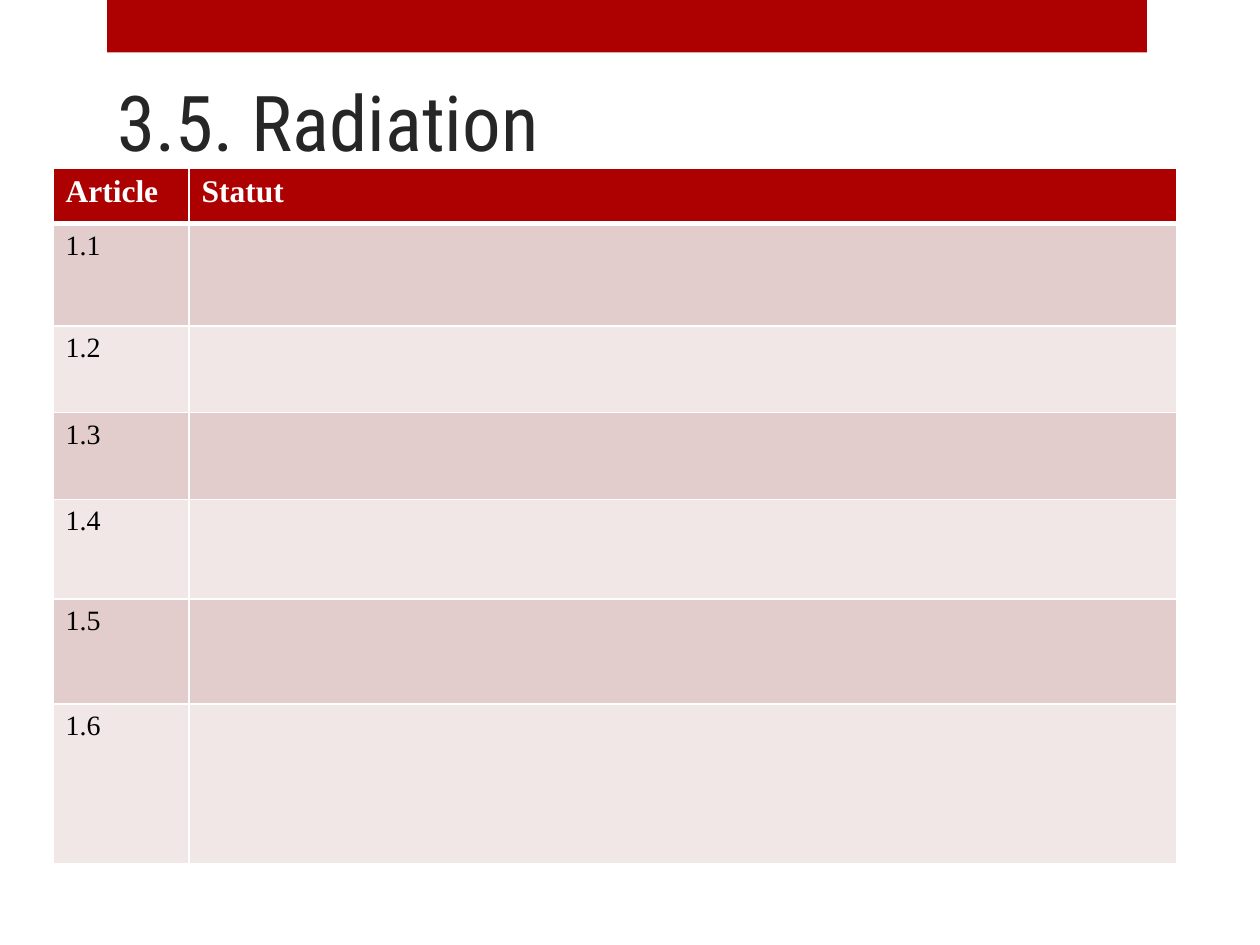
import pptx
import pptx.dml.color
import pptx.enum.shapes
import pptx.enum.text
import pptx.oxml
import pptx.oxml.ns
import pptx.util
from pptx.util import Cm

COLORS = {
    "red": "AD0101",
    "title": "262626",
    "band_dark": "E3CCCC",
    "band_light": "F1E7E7",
    "black": "000000",
    "white": "FFFFFF",
}
COLUMN_WIDTHS = [2.74, 19.91]
ROW_HEIGHTS = [1.12, 2.06, 1.75, 1.75, 2.01, 2.11, 3.23]
HEADERS = ["Article", "Statut"]
ARTICLES = ["1.1", "1.2", "1.3", "1.4", "1.5", "1.6"]


def color(name):
    return pptx.dml.color.RGBColor.from_string(COLORS[name])


def style_font(font, name, size, color_name, bold=False):
    font.name = name
    font.size = pptx.util.Pt(size)
    font.bold = bold
    font.color.rgb = color(color_name)


def add_banner(page, left, top, width, height):
    banner = page.shapes.add_shape(
        pptx.enum.shapes.MSO_SHAPE.RECTANGLE, Cm(left), Cm(top), Cm(width), Cm(height)
    )
    banner.shadow.inherit = False
    banner.fill.solid()
    banner.fill.fore_color.rgb = color("red")
    banner.line.fill.background()


def place_title(page, left, top, width, height):
    title = page.shapes.title
    title.left, title.top = Cm(left), Cm(top)
    title.width, title.height = Cm(width), Cm(height)
    frame = title.text_frame
    frame.text = "3.5. Radiation"
    frame.auto_size = pptx.enum.text.MSO_AUTO_SIZE.NONE
    frame.vertical_anchor = pptx.enum.text.MSO_ANCHOR.BOTTOM
    frame.margin_bottom = Cm(0.03)
    paragraph = frame.paragraphs[0]
    paragraph.alignment = pptx.enum.text.PP_ALIGN.LEFT
    style_font(paragraph.font, "Roboto Condensed", 44, "title")


def add_cell_border(cell, side, points):
    border = pptx.oxml.parse_xml(
        f'<a:{side} {pptx.oxml.ns.nsdecls("a")} w="{pptx.util.Pt(points)}">'
        f'<a:solidFill><a:srgbClr val="{COLORS["white"]}"/></a:solidFill></a:{side}>'
    )
    properties = cell._tc.get_or_add_tcPr()
    properties.insert(len(properties) - 1, border)


def format_cell(cell, row_index):
    is_header = row_index == 0
    if is_header:
        fill = "red"
    else:
        fill = "band_dark" if row_index % 2 else "band_light"
    cell.fill.solid()
    cell.fill.fore_color.rgb = color(fill)
    for side in ("lnL", "lnR", "lnT", "lnB"):
        below_header = (row_index, side) in ((0, "lnB"), (1, "lnT"))
        add_cell_border(cell, side, 3 if below_header else 1)
    style_font(
        cell.text_frame.paragraphs[0].font,
        "Times New Roman",
        18 if is_header else 16,
        "white" if is_header else "black",
        is_header,
    )


def add_status_table(page, left, top):
    table = page.shapes.add_table(
        len(ROW_HEIGHTS), len(COLUMN_WIDTHS), Cm(left), Cm(top),
        Cm(sum(COLUMN_WIDTHS)), Cm(sum(ROW_HEIGHTS)),
    ).table
    for column, width in zip(table.columns, COLUMN_WIDTHS):
        column.width = Cm(width)
    contents = [HEADERS] + [[article, ""] for article in ARTICLES]
    for row_index, (row, texts) in enumerate(zip(table.rows, contents)):
        row.height = Cm(ROW_HEIGHTS[row_index])
        for cell, text in zip(row.cells, texts):
            cell.text = text
            format_cell(cell, row_index)


def main():
    deck = pptx.Presentation()
    deck.slide_width, deck.slide_height = Cm(25.4), Cm(19.05)
    page = deck.slides.add_slide(deck.slide_layouts[5])
    add_banner(page, 2.16, 0, 20.96, 1.06)
    place_title(page, 2.12, -1.06, 18.84, 4.45)
    add_status_table(page, 1.07, 3.39)
    deck.save("out.pptx")


if __name__ == "__main__":
    main()
